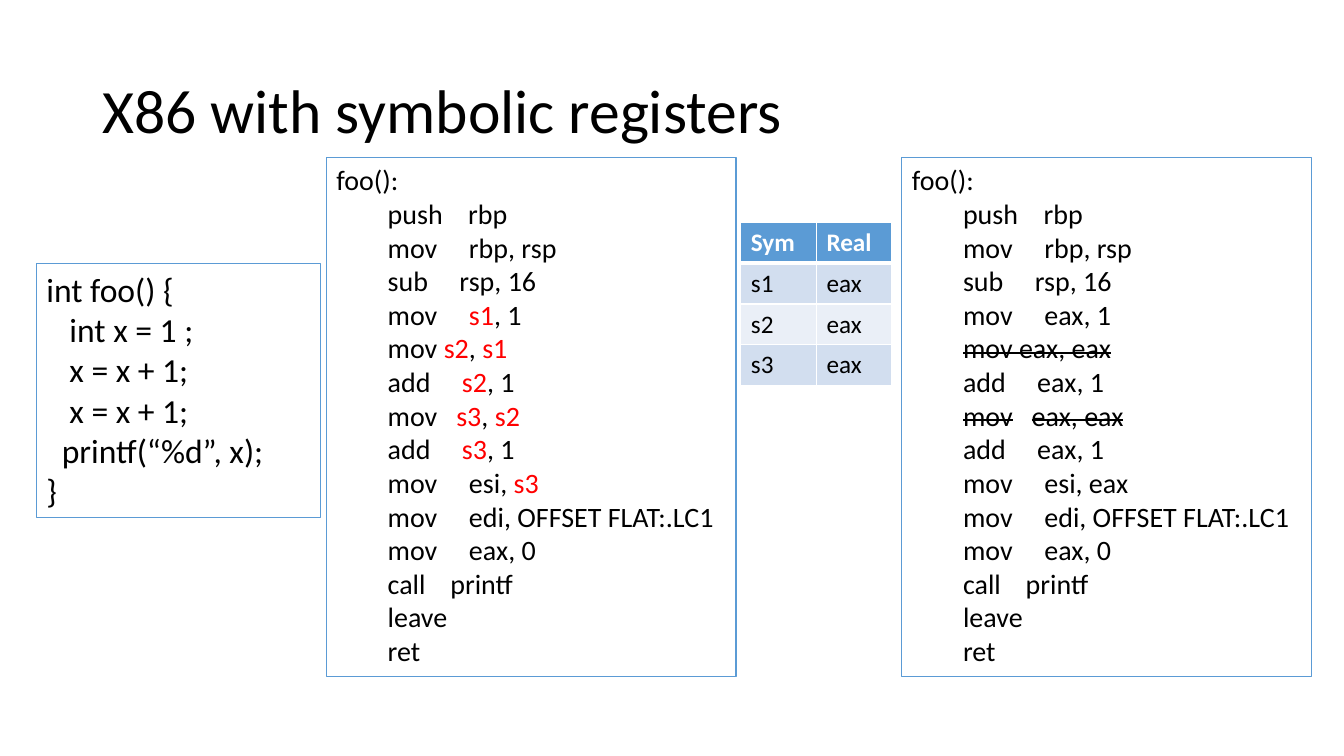
from pptx import Presentation
from pptx.dml.color import RGBColor
from pptx.enum.shapes import MSO_SHAPE as SHAPE
from pptx.enum.text import MSO_ANCHOR as ANCHOR, MSO_AUTO_SIZE as FIT, PP_ALIGN as ALIGN
from pptx.oxml.ns import qn
from pptx.util import Cm, Pt
from lxml.etree import SubElement

REAL = {"s1": "eax", "s2": "eax", "s3": "eax"}
INDENT = 1.29
SOURCE = [
    ("int foo() {", []),
    ("\tint x = 1 ;", [0.58]),
    ("\tx = x + 1;", [0.58]),
    ("\tx = x + 1;", [0.58]),
    ("\tprintf(“%d”, x);", [0.39]),
    ("}", []),
]
PROGRAM = [
    ("push\trbp", 3.32),
    ("mov\trbp, rsp", 3.34),
    ("sub\trsp, 16", 3.1),
    ("mov\t|s1|, 1", 3.34),
    ("mov |s2|, |s1|", 3.34),
    ("add\t|s2|, 1", 3.16),
    ("mov\t|s3|, |s2|", 3.02),
    ("add\t|s3|, 1", 3.16),
    ("mov\tesi, |s3|", 3.34),
    ("mov\tedi, OFFSET FLAT:.LC1", 3.34),
    ("mov\teax, 0", 3.34),
    ("call\tprintf", 2.87),
    ("leave", 3.34),
    ("ret", 3.34),
]


def color(value):
    """Turn a hex string into a colour."""
    return RGBColor.from_string(value)


def allocate(line):
    """Put real registers in a line and mark a move onto itself."""
    line = line.replace("|", "")
    for sym, real in REAL.items():
        line = line.replace(sym, real)
    return f"|{line}|" if line.split() == ["mov", "eax,", "eax"] else line


def listing(lines):
    """Lay out assembly lines under the function label."""
    return [("foo():", [])] + [("\t" + line, [INDENT, stop]) for line, stop in lines]


class Deck:
    """Hold the style and the current slide."""

    font = "Calibri"
    black, white, red, blue = "000000", "FFFFFF", "FF0000", "5B9BD5"
    bands = ("D2DEEF", "EAEFF7")

    def __init__(self, prs):
        """Add a title-only slide."""
        self.s = prs.slides.add_slide(prs.slide_layouts[5])

    def run(self, p, text, size, hue=black, bold=False, strike=False):
        """Add one formatted run to a paragraph."""
        r = p.add_run()
        r.text = text
        for name, value in {"name": self.font, "size": Pt(size), "bold": bold}.items():
            setattr(r.font, name, value)
        r.font.color.rgb = color(hue)
        if strike:
            r.font._element.set("strike", "sngStrike")

    def title(self, text, box):
        """Place and format the title."""
        sp = self.s.shapes.title
        sp.left, sp.top, sp.width, sp.height = map(Cm, box)
        tf = sp.text_frame
        tf.vertical_anchor = ANCHOR.MIDDLE
        p = tf.paragraphs[0]
        p.alignment, p.line_spacing = ALIGN.LEFT, 0.9
        self.run(p, text, 44)

    def code(self, lines, box, size, mark=None):
        """Draw a framed listing, formatting the text between bars with mark."""
        sp = self.s.shapes.add_shape(SHAPE.RECTANGLE, *map(Cm, box))
        sp.shadow.inherit = False
        sp.fill.background()
        sp.line.color.rgb = color(self.blue)
        sp.line.width = Pt(0.75)
        tf = sp.text_frame
        frame = {"word_wrap": True, "vertical_anchor": ANCHOR.TOP,
                 "auto_size": FIT.SHAPE_TO_FIT_TEXT}
        for name, value in frame.items():
            setattr(tf, name, value)
        for i, (line, stops) in enumerate(lines):
            p = tf.add_paragraph() if i else tf.paragraphs[0]
            p.alignment = ALIGN.LEFT
            if stops:
                tabs = SubElement(p._p.get_or_add_pPr(), qn("a:tabLst"))
                for stop in stops:
                    SubElement(tabs, qn("a:tab"), pos=str(Cm(stop)), algn="l")
            for j, part in enumerate(line.split("|")):
                if part:
                    self.run(p, part, size, **(mark if j % 2 else {}))

    def border(self, cell, side, width):
        """Give one side of a cell a white border."""
        ln = SubElement(cell._tc.get_or_add_tcPr(), qn("a:ln" + side), w=str(Pt(width)))
        fill = SubElement(ln, qn("a:solidFill"))
        SubElement(fill, qn("a:srgbClr"), val=self.white)

    def table(self, rows, box):
        """Draw a banded table with a header row."""
        table = self.s.shapes.add_table(len(rows), len(rows[0]), *map(Cm, box)).table
        for i, row in enumerate(rows):
            for j, text in enumerate(row):
                cell, header = table.cell(i, j), i == 0
                widths = {"L": 1, "R": 1, "T": 3 if i == 1 else 1, "B": 3 if header else 1}
                for side, width in widths.items():
                    self.border(cell, side, width)
                cell.fill.solid()
                cell.fill.fore_color.rgb = color(self.blue if header else self.bands[(i - 1) % 2])
                self.run(cell.text_frame.paragraphs[0], text, 18,
                         self.white if header else self.black, header)


def main():
    """Build the slide."""
    prs = Presentation()
    prs.slide_width, prs.slide_height = Cm(33.87), Cm(19.05)
    deck = Deck(prs)
    deck.title("X86 with symbolic registers", (2.33, 1.01, 29.21, 3.68))
    deck.code(SOURCE, (0.92, 6.64, 7.17, 6.4), 24)
    deck.code(listing(PROGRAM), (8.23, 3.98, 10.32, 13.08), 20, {"hue": deck.red})
    allocated = [(allocate(line), stop) for line, stop in PROGRAM]
    deck.code(listing(allocated), (22.73, 3.98, 10.32, 13.08), 20, {"strike": True})
    deck.table([("Sym", "Real"), *REAL.items()], (18.67, 5.6, 3.81, 4.12))
    prs.save("out.pptx")


if __name__ == "__main__":
    main()
